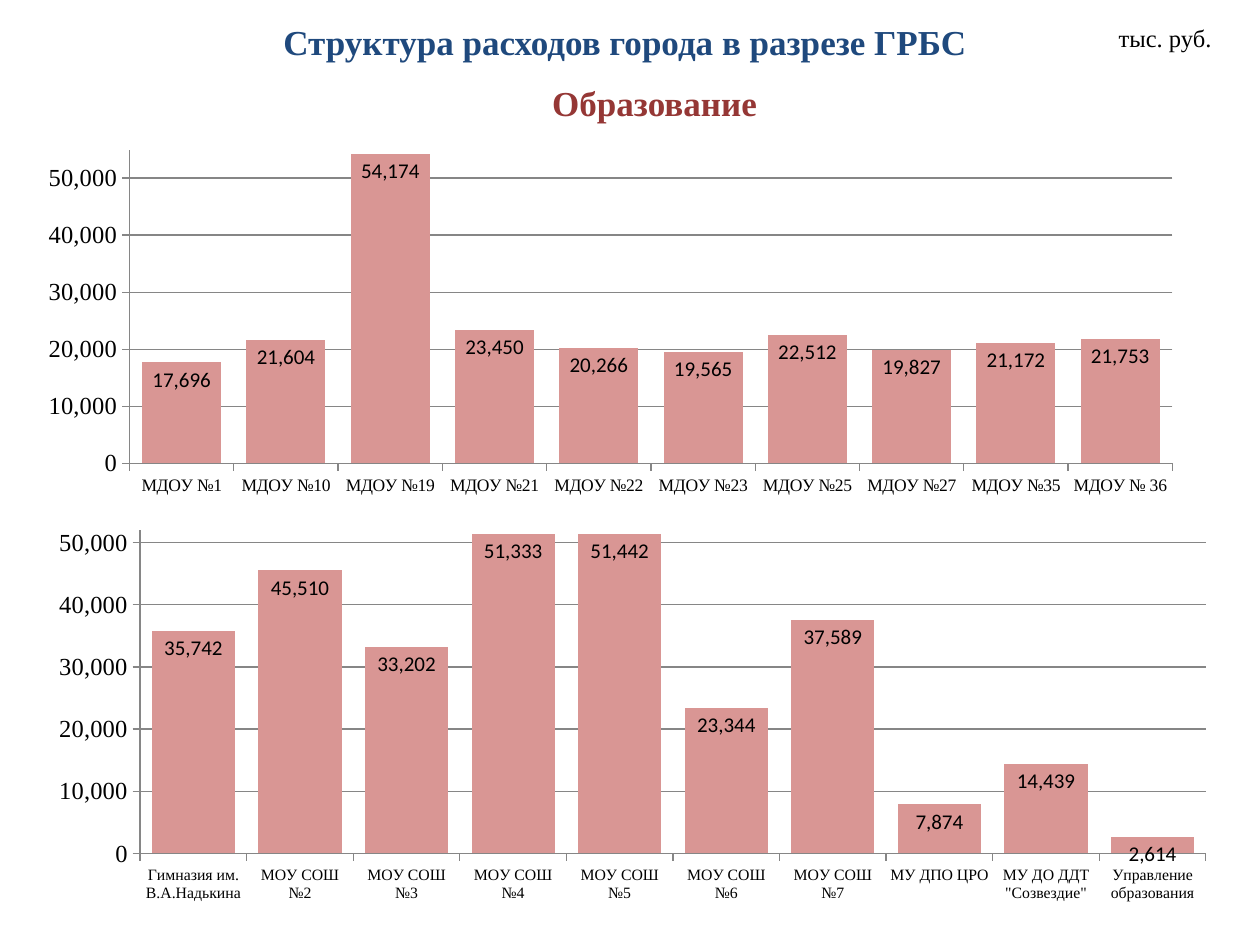
from pptx import Presentation
from pptx.chart.data import CategoryChartData
from pptx.dml.color import RGBColor
from pptx.enum.chart import XL_CHART_TYPE as ChartType, XL_LABEL_POSITION as LabelPos
from pptx.enum.chart import XL_TICK_LABEL_POSITION as TickPos, XL_TICK_MARK as Tick
from pptx.enum.text import MSO_ANCHOR as Anchor, PP_ALIGN as Align
from pptx.util import Inches, Pt

WIDTH, HEIGHT = Inches(10), Inches(7.5)
COLORS = {"title": "1F497D", "subtitle": "953735", "text": "000000",
          "bar": "D99694", "line": "868686"}
SERIF, SANS = "Times New Roman", "Calibri"
NUMBER = "#,##0"

KINDERGARTENS = {
    "МДОУ №1": 17696, "МДОУ №10": 21604, "МДОУ №19": 54174, "МДОУ №21": 23450,
    "МДОУ №22": 20266, "МДОУ №23": 19565, "МДОУ №25": 22512, "МДОУ №27": 19827,
    "МДОУ №35": 21172, "МДОУ № 36": 21753,
}
SCHOOLS = {
    "Гимназия им. В.А.Надькина": 35742, "МОУ СОШ №2": 45510, "МОУ СОШ №3": 33202,
    "МОУ СОШ №4": 51333, "МОУ СОШ №5": 51442, "МОУ СОШ №6": 23344,
    "МОУ СОШ №7": 37589, "МУ ДПО ЦРО": 7874, 'МУ ДО ДДТ "Созвездие"': 14439,
    "Управление образования": 2614,
}


def rgb(name):
    return RGBColor.from_string(COLORS[name])


def place(x, y, w, h):
    """Turn percentages of the slide's size into lengths."""
    return [int(size * share / 100)
            for size, share in zip((WIDTH, HEIGHT) * 2, (x, y, w, h))]


def style(font, name, size, color="text", bold=False):
    font.name, font.size, font.bold = name, Pt(size), bold
    font.color.rgb = rgb(color)


def add_text(s, text, box, size, color="text", bold=False,
             align=Align.LEFT, anchor=Anchor.TOP):
    tf = s.shapes.add_textbox(*place(*box)).text_frame
    tf.word_wrap, tf.vertical_anchor = True, anchor
    p = tf.paragraphs[0]
    p.text, p.alignment = text, align
    style(p.font, SERIF, size, color, bold)


def style_axis(axis, size):
    axis.major_tick_mark, axis.minor_tick_mark = Tick.OUTSIDE, Tick.NONE
    axis.format.line.color.rgb = rgb("line")
    style(axis.tick_labels.font, SERIF, size)


def add_columns(s, values, box, top, gap, label_size):
    data = CategoryChartData(number_format=NUMBER)
    data.categories = list(values)
    data.add_series("Series 1", list(values.values()))
    chart = s.shapes.add_chart(ChartType.COLUMN_CLUSTERED, *place(*box), data).chart
    chart.has_legend = chart.has_title = False
    style(chart.font, SANS, 18)

    # Axes and gridlines
    style_axis(chart.category_axis, label_size)
    chart.category_axis.tick_label_position = TickPos.LOW
    axis = chart.value_axis
    style_axis(axis, 14)
    axis.minimum_scale, axis.maximum_scale, axis.major_unit = 0, top, 10000
    axis.tick_labels.number_format = NUMBER
    axis.tick_labels.number_format_is_linked = False
    axis.major_gridlines.format.line.color.rgb = rgb("line")

    # Columns and their values
    plot = chart.plots[0]
    plot.gap_width, plot.vary_by_categories = gap, False
    fill = plot.series[0].format.fill
    fill.solid()
    fill.fore_color.rgb = rgb("bar")
    plot.has_data_labels = True
    labels = plot.data_labels
    labels.show_value, labels.position = True, LabelPos.INSIDE_END
    labels.number_format, labels.number_format_is_linked = NUMBER, False
    style(labels.font, SANS, 12)


def main():
    prs = Presentation()
    prs.slide_width, prs.slide_height = WIDTH, HEIGHT
    s = prs.slides.add_slide(prs.slide_layouts[6])

    # Headings
    add_text(s, "Структура расходов города в разрезе ГРБС", (16.9, 0.8, 65.4, 7.2),
             20, "title", True, Align.CENTER, Anchor.MIDDLE)
    add_text(s, "Образование", (35, 8, 33.9, 5.9), 20, "subtitle", True, Align.CENTER)

    # Spending by institution
    add_columns(s, KINDERGARTENS, (2, 15.07, 92.9, 38.13), 55000, 32, 10)
    add_columns(s, SCHOOLS, (2.8, 55.2, 94.8, 41.2), 52000, 28, 9)

    # Unit of measure
    add_text(s, "тыс. руб.", (87.8, 1.73, 11, 4.53), 14)

    prs.save("out.pptx")


if __name__ == "__main__":
    main()
